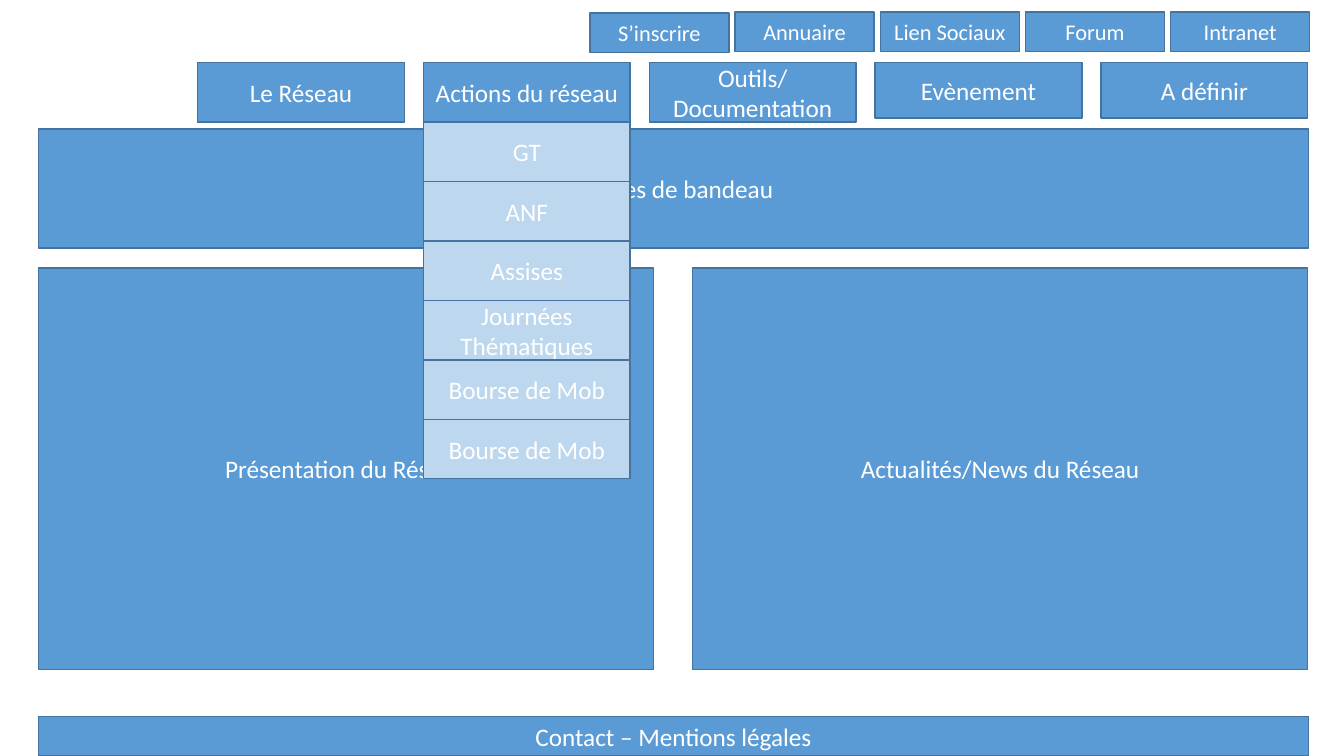
from pptx import Presentation
from pptx.dml.color import RGBColor
from pptx.enum.shapes import MSO_SHAPE
from pptx.enum.text import MSO_ANCHOR, PP_ALIGN
from pptx.util import Inches, Pt

RECT = MSO_SHAPE.RECTANGLE
MIDDLE = MSO_ANCHOR.MIDDLE
CENTER = PP_ALIGN.CENTER

BLUE = RGBColor(0x5B, 0x9B, 0xD5)
PALE = RGBColor(0xBD, 0xD7, 0xEE)
EDGE = RGBColor(0x43, 0x73, 0x9E)
WHITE = RGBColor(0xFF, 0xFF, 0xFF)


class Page:
    font = "Calibri"

    def __init__(self, slide):
        self.slide = slide

    def box(self, text, left, top, width, height, fill=BLUE, size=18):
        shape = self.slide.shapes.add_shape(
            RECT, Inches(left), Inches(top), Inches(width), Inches(height))
        shape.shadow.inherit = False
        shape.fill.solid()
        shape.fill.fore_color.rgb = fill
        shape.line.color.rgb = EDGE
        shape.line.width = Pt(1)
        frame = shape.text_frame
        frame.word_wrap = True
        frame.vertical_anchor = MIDDLE
        para = frame.paragraphs[0]
        para.text = text
        para.alignment = CENTER
        para.font.name = self.font
        para.font.size = Pt(size)
        para.font.color.rgb = WHITE


def main():
    prs = Presentation()
    prs.slide_width = Inches(13.33)
    prs.slide_height = Inches(7.5)
    page = Page(prs.slides.add_slide(prs.slide_layouts[6]))

    # Banner and the two content panels
    page.box("Images de bandeau", 0.38, 1.28, 12.6, 1.18)
    page.box("Présentation du Réseau", 0.38, 2.66, 6.1, 3.98)
    page.box("Actualités/News du Réseau", 6.87, 2.66, 6.1, 3.98)

    # Main menu
    menu = [("Le Réseau", 0.59), ("Actions du réseau", 0.59),
            ("Outils/Documentation", 0.59), ("Evènement", 0.55),
            ("A définir", 0.55)]
    for i, (text, height) in enumerate(menu):
        page.box(text, 1.96 + 2.24 * i, 0.62, 2.05, height)

    # Footer
    page.box("Contact – Mentions légales", 0.38, 7.11, 12.6, 0.39)

    # Quick links
    links = [("S’inscrire", 0.13), ("Annuaire", 0.12), ("Lien Sociaux", 0.12),
             ("Forum", 0.12), ("Intranet", 0.12)]
    for i, (text, top) in enumerate(links):
        page.box(text, 5.85 + 1.44 * i, top, 1.38, 0.39, size=16)

    # Open submenu, over the panels
    items = ["GT", "ANF", "Assises", "Journées Thématiques",
             "Bourse de Mob", "Bourse de Mob"]
    for i, text in enumerate(items):
        page.box(text, 4.2, 1.21 + 0.59 * i, 2.05, 0.59, fill=PALE)

    prs.save("out.pptx")


if __name__ == "__main__":
    main()
